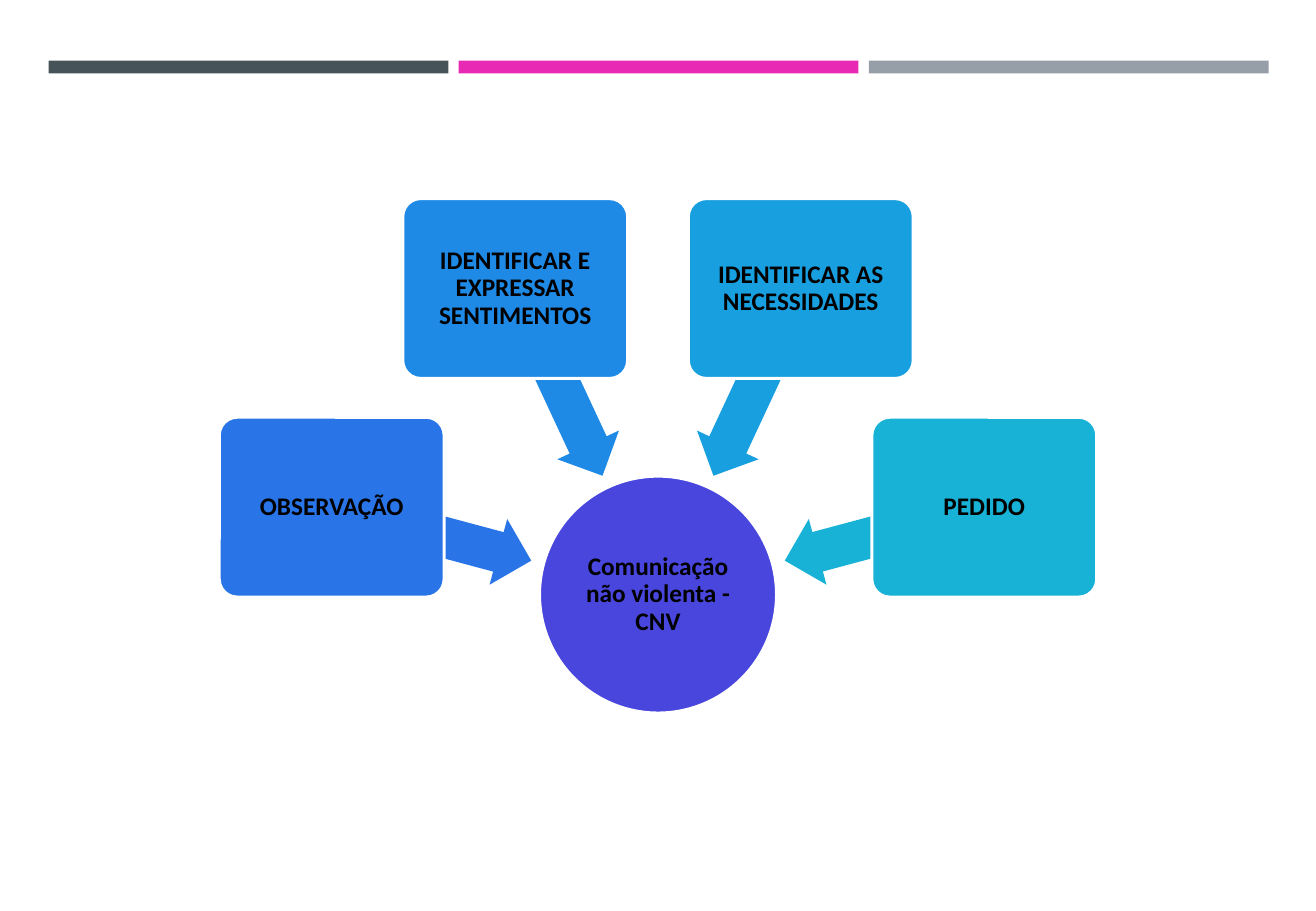
from dataclasses import dataclass
from math import cos, radians, sin

from pptx import Presentation
from pptx.dml.color import RGBColor
from pptx.enum.shapes import MSO_SHAPE as Preset
from pptx.enum.text import MSO_ANCHOR as Anchor, PP_ALIGN as Align
from pptx.shapes.autoshape import Shape
from pptx.slide import Slide
from pptx.util import Inches, Length, Pt

CELL = Inches(0.1)
COLUMNS, ROWS = 108.3, 75
COLORS = {
    "slate": "465359",
    "pink": "E729B4",
    "gray": "969FA7",
    "hub": "4846DD",
    "observation": "2975E7",
    "feelings": "1E8AE6",
    "needs": "189FE0",
    "request": "17B2D5",
    "edge": "FFFFFF",
    "text": "000000",
}
BAR_LEFT, BAR_TOP, BAR_PITCH = 4, 5, 33.75
BAR_WIDTH, BAR_HEIGHT = 32.9, 1.05
HUB_COLUMN, HUB_ROW, HUB_SIZE = 54.15, 48.95, 19.5
BOX_RADIUS, BOX_WIDTH, BOX_HEIGHT = 27.8, 18.5, 14.8
ARROW_RADIUS, ARROW_LENGTH, ARROW_THICKNESS = 19.3, 17, 5.6
FIRST_ANGLE, ANGLE_STEP = 195, 50
FONT_FORMAT = {"name": "Calibri", "size": Pt(15), "bold": True}


@dataclass(frozen=True)
class Step:
    label: str
    color: str


STEPS = [
    Step("OBSERVAÇÃO", "observation"),
    Step("IDENTIFICAR E EXPRESSAR SENTIMENTOS", "feelings"),
    Step("IDENTIFICAR AS NECESSIDADES", "needs"),
    Step("PEDIDO", "request"),
]


def cells(count: float) -> Length:
    return Length(round(count * CELL))


def rgb(name: str) -> RGBColor:
    return RGBColor.from_string(COLORS[name])


def add_centered(page: Slide, preset: Preset, column: float, row: float,
                 width: float, height: float, color: str) -> Shape:
    shape = page.shapes.add_shape(
        preset, cells(column - width / 2), cells(row - height / 2),
        cells(width), cells(height))
    shape.shadow.inherit = False
    shape.fill.solid()
    shape.fill.fore_color.rgb = rgb(color)
    shape.line.fill.background()
    return shape


def add_label(shape: Shape, label: str, inset: float) -> None:
    shape.line.color.rgb = rgb("edge")
    shape.line.width = Pt(1.75)
    frame = shape.text_frame
    frame_format = {"word_wrap": True, "vertical_anchor": Anchor.MIDDLE}
    for side in ("left", "top", "right", "bottom"):
        frame_format[f"margin_{side}"] = Inches(inset)
    for key, value in frame_format.items():
        setattr(frame, key, value)
    para = frame.paragraphs[0]
    para.alignment = Align.CENTER
    para.line_spacing = 0.9
    span = para.add_run()
    span.text = label
    for key, value in FONT_FORMAT.items():
        setattr(span.font, key, value)
    span.font.color.rgb = rgb("text")


def add_bars(page: Slide) -> None:
    for index, color in enumerate(("slate", "pink", "gray")):
        add_centered(page, Preset.RECTANGLE,
                     BAR_LEFT + index * BAR_PITCH + BAR_WIDTH / 2,
                     BAR_TOP + BAR_HEIGHT / 2, BAR_WIDTH, BAR_HEIGHT, color)


def around_hub(angle: float, radius: float) -> tuple[float, float]:
    turn = radians(angle)
    return HUB_COLUMN + radius * cos(turn), HUB_ROW + radius * sin(turn)


def add_step(page: Slide, step: Step, angle: float) -> None:
    arrow = add_centered(page, Preset.LEFT_ARROW,
                         *around_hub(angle, ARROW_RADIUS),
                         ARROW_LENGTH, ARROW_THICKNESS, step.color)
    arrow.rotation = angle
    arrow.adjustments[0] = 0.6
    arrow.adjustments[1] = 0.5
    box = add_centered(page, Preset.ROUNDED_RECTANGLE,
                       *around_hub(angle, BOX_RADIUS),
                       BOX_WIDTH, BOX_HEIGHT, step.color)
    box.adjustments[0] = 0.1
    add_label(box, step.label, 0.03)


def main() -> None:
    deck = Presentation()
    deck.slide_width, deck.slide_height = cells(COLUMNS), cells(ROWS)
    page = deck.slides.add_slide(deck.slide_layouts[6])
    add_bars(page)
    hub = add_centered(page, Preset.OVAL, HUB_COLUMN, HUB_ROW,
                       HUB_SIZE, HUB_SIZE, "hub")
    add_label(hub, "Comunicação não violenta - CNV", 0.01)
    for index, step in enumerate(STEPS):
        add_step(page, step, FIRST_ANGLE + index * ANGLE_STEP)
    deck.save("out.pptx")


if __name__ == "__main__":
    main()
